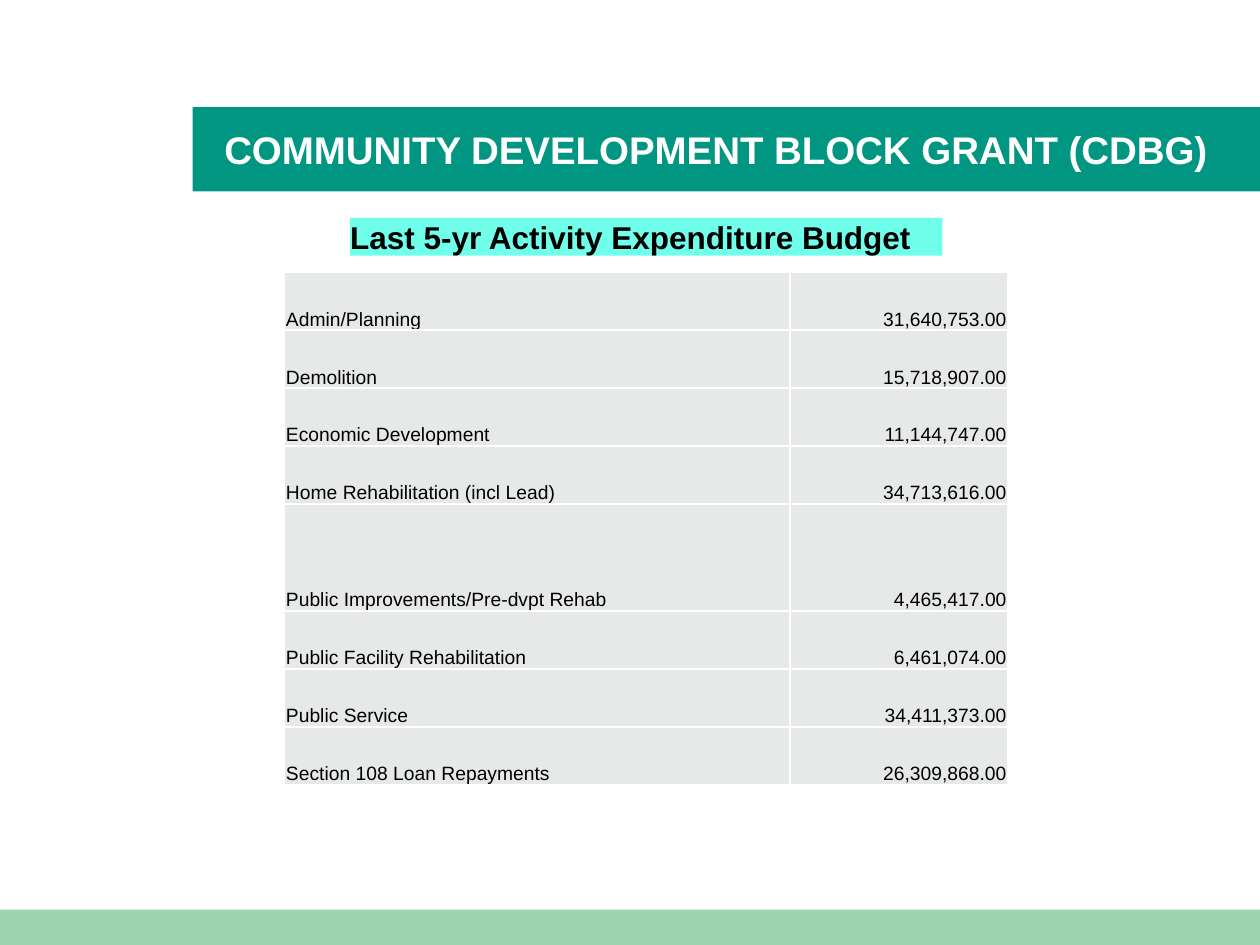
import dataclasses

import lxml.etree
import pptx
import pptx.dml.color
import pptx.enum.shapes
import pptx.enum.text
import pptx.oxml.ns
import pptx.util

WIDE, HIGH = 10, 7.5
ANCHOR = pptx.enum.text.MSO_ANCHOR
ALIGN = pptx.enum.text.PP_ALIGN


@dataclasses.dataclass(frozen=True)
class Theme:
    font: str = "Arial"
    teal: str = "009681"
    mint: str = "9FD4B3"
    aqua: str = "6FFFEB"
    gray: str = "E7E9E9"
    white: str = "FFFFFF"
    black: str = "000000"
    title: int = 22
    head: int = 18
    body: int = 11


@dataclasses.dataclass(frozen=True)
class Box:
    """A frame given in shares of the slide's size."""
    left: float
    top: float
    wide: float
    high: float

    def frame(self) -> tuple:
        return (pptx.util.Inches(self.left * WIDE), pptx.util.Inches(self.top * HIGH),
                pptx.util.Inches(self.wide * WIDE), pptx.util.Inches(self.high * HIGH))


@dataclasses.dataclass(frozen=True)
class Item:
    name: str
    cost: str
    high: float = 0.46


THEME = Theme()
BANNER = Box(1.53 / WIDE, 0.85 / HIGH, 8.47 / WIDE, 0.67 / HIGH)
TITLE = Box(1.78 / WIDE, BANNER.top, 8.22 / WIDE, BANNER.high)
FOOTER = Box(0, 7.22 / HIGH, 1, 0.28 / HIGH)
LABEL = Box(2.78 / WIDE, 1.73 / HIGH, 4.7 / WIDE, 0.3 / HIGH)
TABLE = Box(2.26 / WIDE, 2.16 / HIGH, 5.74 / WIDE, 4.06 / HIGH)
COLUMNS = (4.01, 1.73)
ITEMS = (
    Item("Admin/Planning", "31,640,753.00"),
    Item("Demolition", "15,718,907.00"),
    Item("Economic Development", "11,144,747.00"),
    Item("Home Rehabilitation (incl Lead)", "34,713,616.00"),
    Item("Public Improvements/Pre-dvpt Rehab", "4,465,417.00", 0.85),
    Item("Public Facility Rehabilitation", "6,461,074.00"),
    Item("Public Service", "34,411,373.00"),
    Item("Section 108 Loan Repayments", "26,309,868.00"),
)


def paint(fill, color: str) -> None:
    fill.solid()
    fill.fore_color.rgb = pptx.dml.color.RGBColor.from_string(color)


def write(frame, text: str, size: int, color: str, bold: bool = False,
          align=ALIGN.LEFT) -> None:
    para = frame.paragraphs[0]
    para.text = text
    para.alignment = align
    para.font.name = THEME.font
    para.font.size = pptx.util.Pt(size)
    para.font.bold = bold
    para.font.color.rgb = pptx.dml.color.RGBColor.from_string(color)


def add_bar(slide, box: Box, color: str):
    bar = slide.shapes.add_shape(pptx.enum.shapes.MSO_SHAPE.RECTANGLE, *box.frame())
    bar.shadow.inherit = False
    paint(bar.fill, color)
    bar.line.fill.background()
    return bar


def add_line(shape, text: str, size: int, color: str, anchor) -> None:
    """Put one bold line of text in a shape, with no insets."""
    frame = shape.text_frame
    frame.word_wrap = True
    frame.vertical_anchor = anchor
    frame.margin_left = frame.margin_right = frame.margin_top = frame.margin_bottom = 0
    write(frame, text, size, color, bold=True)


def add_rules(cell) -> None:
    """Draw the cell's four borders, which must come before its fill."""
    props = cell._tc.get_or_add_tcPr()
    name = pptx.oxml.ns.qn
    for index, side in enumerate(("a:lnL", "a:lnR", "a:lnT", "a:lnB")):
        line = lxml.etree.Element(name(side), w=str(pptx.util.Pt(1)))
        fill = lxml.etree.SubElement(line, name("a:solidFill"))
        lxml.etree.SubElement(fill, name("a:srgbClr"), val=THEME.white)
        props.insert(index, line)


def fill_cell(cell, text: str, align) -> None:
    cell.vertical_anchor = ANCHOR.BOTTOM
    cell.margin_left = cell.margin_right = cell.margin_top = pptx.util.Inches(0.01)
    cell.margin_bottom = 0
    paint(cell.fill, THEME.gray)
    write(cell.text_frame, text, THEME.body, THEME.black, align=align)
    add_rules(cell)


def add_budget(slide) -> None:
    table = slide.shapes.add_table(len(ITEMS), len(COLUMNS), *TABLE.frame()).table
    table.first_row = table.horz_banding = False
    for column, wide in zip(table.columns, COLUMNS):
        column.width = pptx.util.Inches(wide)
    for row, item in zip(table.rows, ITEMS):
        row.height = pptx.util.Inches(item.high)
        fill_cell(row.cells[0], item.name, ALIGN.LEFT)
        fill_cell(row.cells[1], item.cost, ALIGN.RIGHT)


def main() -> None:
    deck = pptx.Presentation()
    deck.slide_width = pptx.util.Inches(WIDE)
    deck.slide_height = pptx.util.Inches(HIGH)
    slide = deck.slides.add_slide(deck.slide_layouts[6])
    add_bar(slide, BANNER, THEME.teal)
    add_bar(slide, FOOTER, THEME.mint)
    title = slide.shapes.add_textbox(*TITLE.frame())
    add_line(title, "COMMUNITY DEVELOPMENT BLOCK GRANT (CDBG)",
             THEME.title, THEME.white, ANCHOR.MIDDLE)
    add_budget(slide)
    label = add_bar(slide, LABEL, THEME.aqua)
    add_line(label, "Last 5-yr Activity Expenditure Budget",
             THEME.head, THEME.black, ANCHOR.TOP)
    deck.save("out.pptx")


if __name__ == "__main__":
    main()
